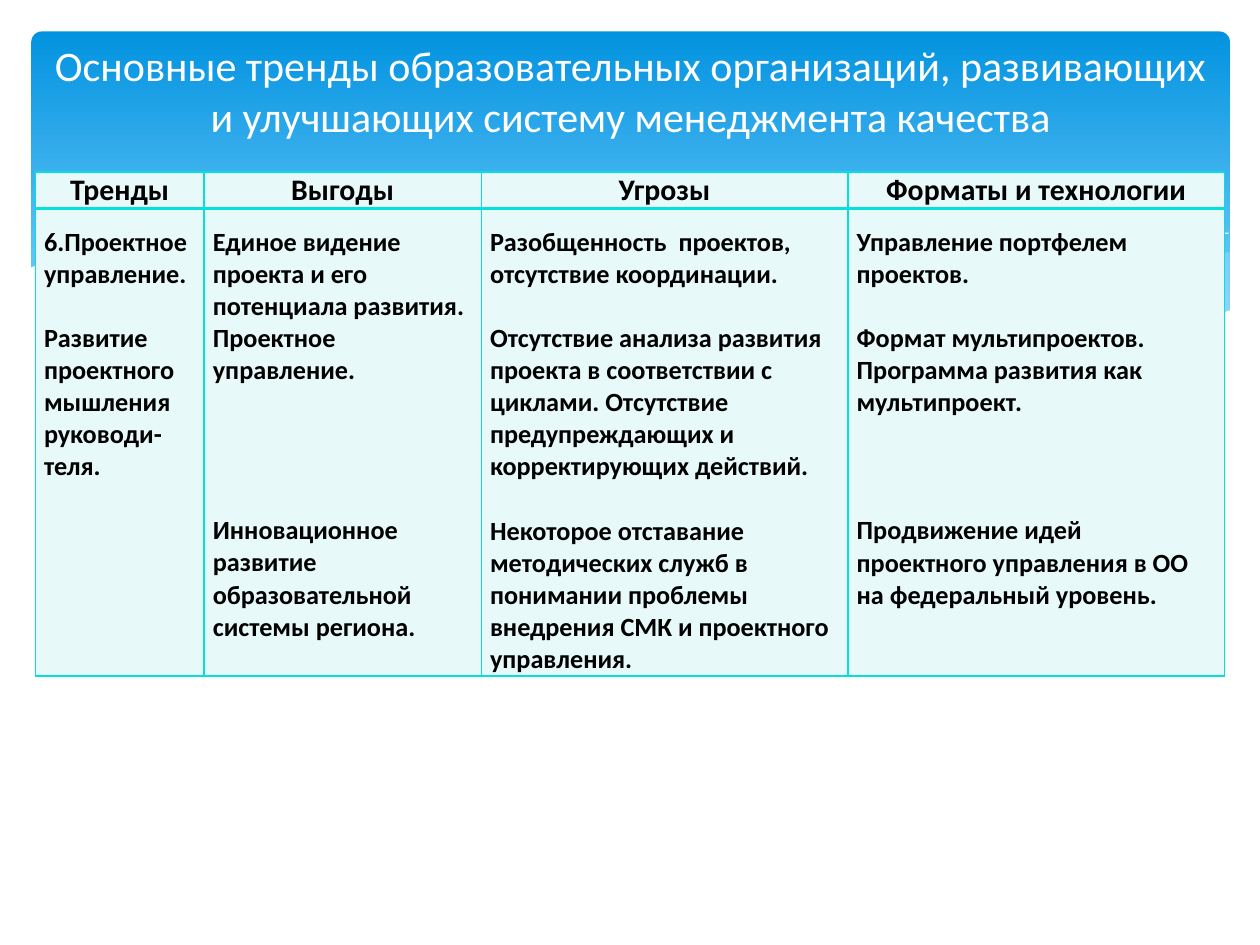
"""Build the slide on quality-management trends with its wave banner and table."""
from dataclasses import dataclass
from typing import NamedTuple, Optional

from lxml.etree import SubElement
from pptx import Presentation
from pptx.dml.color import RGBColor as RGB
from pptx.enum.shapes import MSO_SHAPE as SHAPE
from pptx.enum.text import MSO_ANCHOR as ANCHOR, PP_ALIGN as ALIGN
from pptx.oxml.ns import qn
from pptx.util import Inches, Pt

COLS, ROWS = 100, 75
UNIT = Inches(10) // COLS


@dataclass(frozen=True)
class Theme:
    font: str = "Calibri"
    white: str = "FFFFFF"
    ink: str = "000000"
    banner_top: str = "0293E0"
    banner_end: str = "83D3FE"
    wave: str = "C6E7FC"
    cell: str = "E7F9F8"
    border: str = "05E0DB"
    title_pt: float = 24
    head_pt: float = 17
    body_pt: float = 15
    line_pt: float = 18.3


class Wave(NamedTuple):
    points: list
    fill: Optional[str] = None
    alpha: int = 100


class Para(NamedTuple):
    text: str
    gap: int = 0


class Column(NamedTuple):
    width: float
    head: str
    body: list


THEME = Theme()

WAVES = [
    Wave([(97.6, 20), (94.8, 20.4), (90.6, 21.3), (86.1, 22.3), (77.9, 24.2),
          (70.6, 25.7), (66.1, 26.5), (70.5, 27.1), (75.7, 27.6), (80.3, 27.8),
          (85.4, 27.6), (89.7, 27), (93.5, 26.2), (97.6, 24.7)], THEME.wave, 29),
    Wave([(89.3, 27.3), (83.7, 26.5), (77.5, 25.4), (70.6, 24), (62.9, 22.2),
          (56.9, 20.8), (51.4, 19.8), (46.5, 19.1), (42, 18.7), (38, 18.5),
          (32.8, 18.7), (28.6, 19.1), (34.2, 19.9), (40.4, 21.1), (44.9, 22.2),
          (53, 24), (60.1, 25.5), (66.5, 26.6), (72.2, 27.4), (77.3, 27.7),
          (81.8, 27.8), (86.7, 27.6)], THEME.wave, 40),
    Wave([(30.9, 19.5), (34.4, 19), (38.7, 18.7), (43.3, 18.7), (48.9, 19),
          (55.6, 19.7), (63.6, 20.8), (72.7, 22.6), (79.5, 24.1), (90.7, 27.2)]),
    Wave([(61.3, 25.7), (67.2, 24.1), (74.8, 22.3), (83.6, 20.4), (89.5, 19.4),
          (93.8, 18.8), (97.5, 18.5)]),
    Wave([(97.7, 24.6), (94, 25.9), (89.9, 26.9), (85, 27.5), (80.9, 27.7),
          (74.4, 27.4), (66.8, 26.5), (60.3, 25.4), (52.9, 23.9), (44.7, 22),
          (39.1, 20.7), (34, 19.7), (29.2, 19), (25, 18.6), (21.1, 18.4),
          (16.1, 18.4), (11.9, 18.7), (8.5, 19.3), (5.2, 20.1), (2.3, 21.3),
          (2.3, 32.9), (97.7, 32.9)], THEME.white),
]

TABLE = [
    Column(13.4, "Тренды", [
        Para("6.Проектное управление."),
        Para("Развитие проектного мышления руководи-теля.", 1)]),
    Column(22, "Выгоды", [
        Para("Единое видение проекта и его потенциала развития."),
        Para("Проектное управление."),
        Para("Инновационное развитие образовательной системы региона.", 4)]),
    Column(29.1, "Угрозы", [
        Para("Разобщенность  проектов, отсутствие координации."),
        Para("Отсутствие анализа развития проекта в соответствии с циклами. "
             "Отсутствие предупреждающих и корректирующих действий.", 1),
        Para("Некоторое отставание методических служб в понимании проблемы "
             "внедрения СМК и проектного управления.", 1)]),
    Column(29.9, "Форматы и технологии", [
        Para("Управление портфелем проектов."),
        Para("Формат мультипроектов.", 1),
        Para("Программа развития как мультипроект."),
        Para("Продвижение идей проектного управления в ОО на федеральный уровень.", 3)]),
]
ROW_HEIGHTS = (2.85, 37.1)


def grid(*values: float) -> list:
    """Turn grid units into slide lengths."""
    return [round(v * UNIT) for v in values]


def style(p, size: float, color: str, bold: bool, align=ALIGN.LEFT) -> None:
    """Set the font and alignment of a paragraph."""
    p.font.name, p.font.size, p.font.bold = THEME.font, Pt(size), bold
    p.font.color.rgb = RGB.from_string(color)
    p.alignment = align


def draw_banner(shapes) -> None:
    """Draw the rounded gradient banner."""
    s = shapes.add_shape(SHAPE.ROUNDED_RECTANGLE, *grid(2.5, 2.5, 95.1, 27))
    s.adjustments[0] = 0.03
    s.shadow.inherit = False
    s.line.fill.background()
    s.fill.gradient()
    s.fill.gradient_angle = 270
    stops = ((0, THEME.banner_top), (0.9, THEME.banner_end))
    for stop, (position, color) in zip(s.fill.gradient_stops, stops):
        stop.position, stop.color.rgb = position, RGB.from_string(color)


def draw_wave(shapes, wave: Wave) -> None:
    """Draw a filled wave, or a hairline when it has no fill."""
    start, *rest = [tuple(grid(*pt)) for pt in wave.points]
    builder = shapes.build_freeform(*start, scale=1.0)
    builder.add_line_segments(rest, close=wave.fill is not None)
    s = builder.convert_to_shape()
    s.shadow.inherit = False
    if wave.fill is None:
        s.fill.background()
        s.line.color.rgb = RGB.from_string(THEME.white)
        s.line.width = Pt(0)
        return
    s.line.fill.background()
    s.fill.solid()
    s.fill.fore_color.rgb = RGB.from_string(wave.fill)
    if wave.alpha < 100:
        color = s.element.spPr.find(qn("a:solidFill"))[0]
        SubElement(color, qn("a:alpha"), val=str(wave.alpha * 1000))


def draw_title(shapes, text: str) -> None:
    """Write the centred slide title."""
    tf = shapes.add_textbox(*grid(2.8, 2.1, 94.5, 10.1)).text_frame
    tf.word_wrap, tf.vertical_anchor = True, ANCHOR.MIDDLE
    p = tf.paragraphs[0]
    p.text = text
    style(p, THEME.title_pt, THEME.white, False, ALIGN.CENTER)


def format_cell(cell, top: float, top_line: float) -> None:
    """Set a cell's borders, fill and margins."""
    tc_pr = cell._tc.get_or_add_tcPr()
    for side, width in (("L", 1), ("R", 1), ("T", top_line), ("B", 1)):
        ln = SubElement(tc_pr, qn(f"a:ln{side}"), w=str(Pt(width)))
        SubElement(SubElement(ln, qn("a:solidFill")), qn("a:srgbClr"), val=THEME.border)
    cell.fill.solid()
    cell.fill.fore_color.rgb = RGB.from_string(THEME.cell)
    cell.margin_left = cell.margin_right = Inches(0.07)
    cell.margin_top, cell.margin_bottom = Inches(top), 0


def draw_table(shapes, columns: list) -> None:
    """Draw the table of trends."""
    size = (sum(c.width for c in columns), sum(ROW_HEIGHTS))
    table = shapes.add_table(2, len(columns), *grid(2.8, 13.65, *size)).table
    table.first_row = table.horz_banding = False
    for row, height in zip(table.rows, grid(*ROW_HEIGHTS)):
        row.height = height
    for i, column in enumerate(columns):
        table.columns[i].width = grid(column.width)[0]
        head, body = table.cell(0, i), table.cell(1, i)
        format_cell(head, 0, 1)
        format_cell(body, 0.14, 2)
        head.text = column.head
        style(head.text_frame.paragraphs[0], THEME.head_pt, THEME.ink, True, ALIGN.CENTER)
        body.text = "\n".join(para.text for para in column.body)
        for p, para in zip(body.text_frame.paragraphs, column.body):
            style(p, THEME.body_pt, THEME.ink, True)
            p.space_before = Pt(para.gap * THEME.line_pt)


def main() -> None:
    """Build and save the slide."""
    prs = Presentation()
    prs.slide_width, prs.slide_height = grid(COLS, ROWS)
    shapes = prs.slides.add_slide(prs.slide_layouts[6]).shapes
    draw_banner(shapes)
    for wave in WAVES:
        draw_wave(shapes, wave)
    draw_table(shapes, TABLE)
    draw_title(shapes, "Основные тренды образовательных организаций, развивающих "
                       "и улучшающих систему менеджмента качества")
    prs.save("out.pptx")


if __name__ == "__main__":
    main()
